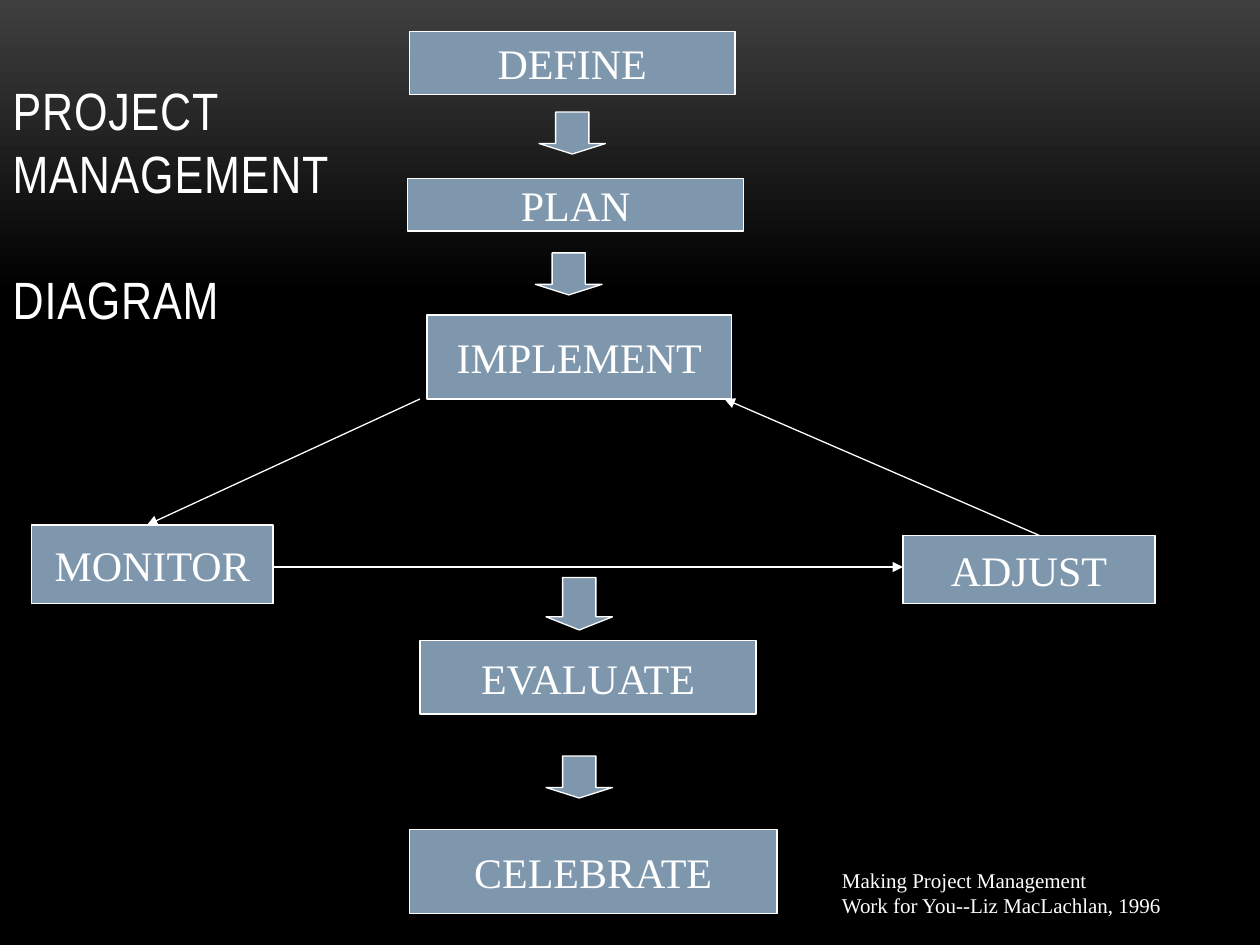
from lxml import etree
from pptx import Presentation
from pptx.dml.color import RGBColor
from pptx.enum.shapes import MSO_CONNECTOR, MSO_SHAPE
from pptx.enum.text import MSO_ANCHOR, MSO_AUTO_SIZE, PP_ALIGN
from pptx.oxml.ns import qn
from pptx.util import Pt

RECTANGLE = MSO_SHAPE.RECTANGLE
DOWN_ARROW = MSO_SHAPE.DOWN_ARROW
STRAIGHT = MSO_CONNECTOR.STRAIGHT
MIDDLE = MSO_ANCHOR.MIDDLE
BOTTOM = MSO_ANCHOR.BOTTOM
CENTER = PP_ALIGN.CENTER
LEFT = PP_ALIGN.LEFT
NO_FIT = MSO_AUTO_SIZE.NONE
GROW = MSO_AUTO_SIZE.SHAPE_TO_FIT_TEXT

WHITE = RGBColor(0xFF, 0xFF, 0xFF)
BLACK = RGBColor(0, 0, 0)
GRAPHITE = RGBColor(0x3F, 0x3F, 0x3F)
STEEL = RGBColor(0x7E, 0x97, 0xAD)

STEPS = [
    ("DEFINE", 234, 18, 186, 36),
    ("PLAN", 233, 102, 192, 30),
    ("IMPLEMENT", 244, 180, 174, 48),
    ("MONITOR", 18, 300, 138, 45),
    ("ADJUST", 516, 306, 144, 39),
    ("EVALUATE", 240, 366, 192, 42),
    ("CELEBRATE", 234, 474, 210, 48),
]
DOWN_ARROWS = [(308, 64, 24), (306, 144.5, 24), (312, 330, 30), (312, 432, 24)]
LINKS = [(240, 228, 84, 300), (156, 324, 516, 324), (594, 306, 414, 228)]


class Diagram:
    body_font = "Times New Roman"
    title_font = "Arial Narrow"
    line_width = Pt(0.75)
    arrow_width = 38

    def __init__(self, slide):
        self.slide = slide

    def background(self):
        fill = self.slide.background.fill
        fill.gradient()
        fill.gradient_angle = 270
        for stop, color, position in zip(fill.gradient_stops, (GRAPHITE, BLACK), (0, 0.31)):
            stop.color.rgb = color
            stop.position = position

    def set_text(self, frame, text, font_name, size, align):
        frame.text = text
        for paragraph in frame.paragraphs:
            paragraph.alignment = align
            for run in paragraph.runs:
                run.font.name = font_name
                run.font.size = Pt(size)
                run.font.color.rgb = WHITE

    def title(self, text, left, top, width, height):
        heading = self.slide.shapes.title
        heading.left, heading.top = Pt(left), Pt(top)
        heading.width, heading.height = Pt(width), Pt(height)
        frame = heading.text_frame
        self.set_text(frame, text, self.title_font, 30, LEFT)
        frame.word_wrap = True
        frame.auto_size = NO_FIT
        frame.vertical_anchor = BOTTOM
        frame.paragraphs[0].line_spacing = Pt(36)
        for run in frame.paragraphs[0].runs:
            run.font._element.set("spc", "50")

    def block(self, preset, left, top, width, height):
        shape = self.slide.shapes.add_shape(preset, Pt(left), Pt(top), Pt(width), Pt(height))
        shape.shadow.inherit = False
        shape.fill.solid()
        shape.fill.fore_color.rgb = STEEL
        shape.line.color.rgb = WHITE
        shape.line.width = self.line_width
        return shape

    def step(self, text, left, top, width, height):
        frame = self.block(RECTANGLE, left, top, width, height).text_frame
        self.set_text(frame, text, self.body_font, 24, CENTER)
        frame.word_wrap = False
        frame.vertical_anchor = MIDDLE

    def down_arrow(self, left, top, height):
        arrow = self.block(DOWN_ARROW, left, top, self.arrow_width, height)
        arrow.adjustments[0] = 0.5
        arrow.adjustments[1] = 0.25

    def link(self, *ends):
        connector = self.slide.shapes.add_connector(STRAIGHT, *map(Pt, ends))
        connector.line.color.rgb = WHITE
        connector.line.width = self.line_width
        line = connector.line._get_or_add_ln()
        etree.SubElement(line, qn("a:tailEnd"), type="triangle")
        etree.SubElement(connector._element.spPr, qn("a:effectLst"))

    def credit(self, text, left, top, width, height):
        box = self.slide.shapes.add_textbox(Pt(left), Pt(top), Pt(width), Pt(height))
        frame = box.text_frame
        self.set_text(frame, text, self.body_font, 12, LEFT)
        frame.word_wrap = True
        frame.auto_size = GROW


def main():
    deck = Presentation()
    deck.slide_width, deck.slide_height = Pt(720), Pt(540)
    diagram = Diagram(deck.slides.add_slide(deck.slide_layouts[5]))
    diagram.background()
    diagram.title("PROJECT\vMANAGEMENT \vDIAGRAM", 0, 18, 198, 174)
    for step in STEPS:
        diagram.step(*step)
    for arrow in DOWN_ARROWS:
        diagram.down_arrow(*arrow)
    for link in LINKS:
        diagram.link(*link)
    diagram.credit("Making Project Management\nWork for You--Liz MacLachlan, 1996", 474, 492, 229, 36)
    deck.save("out.pptx")


if __name__ == "__main__":
    main()
